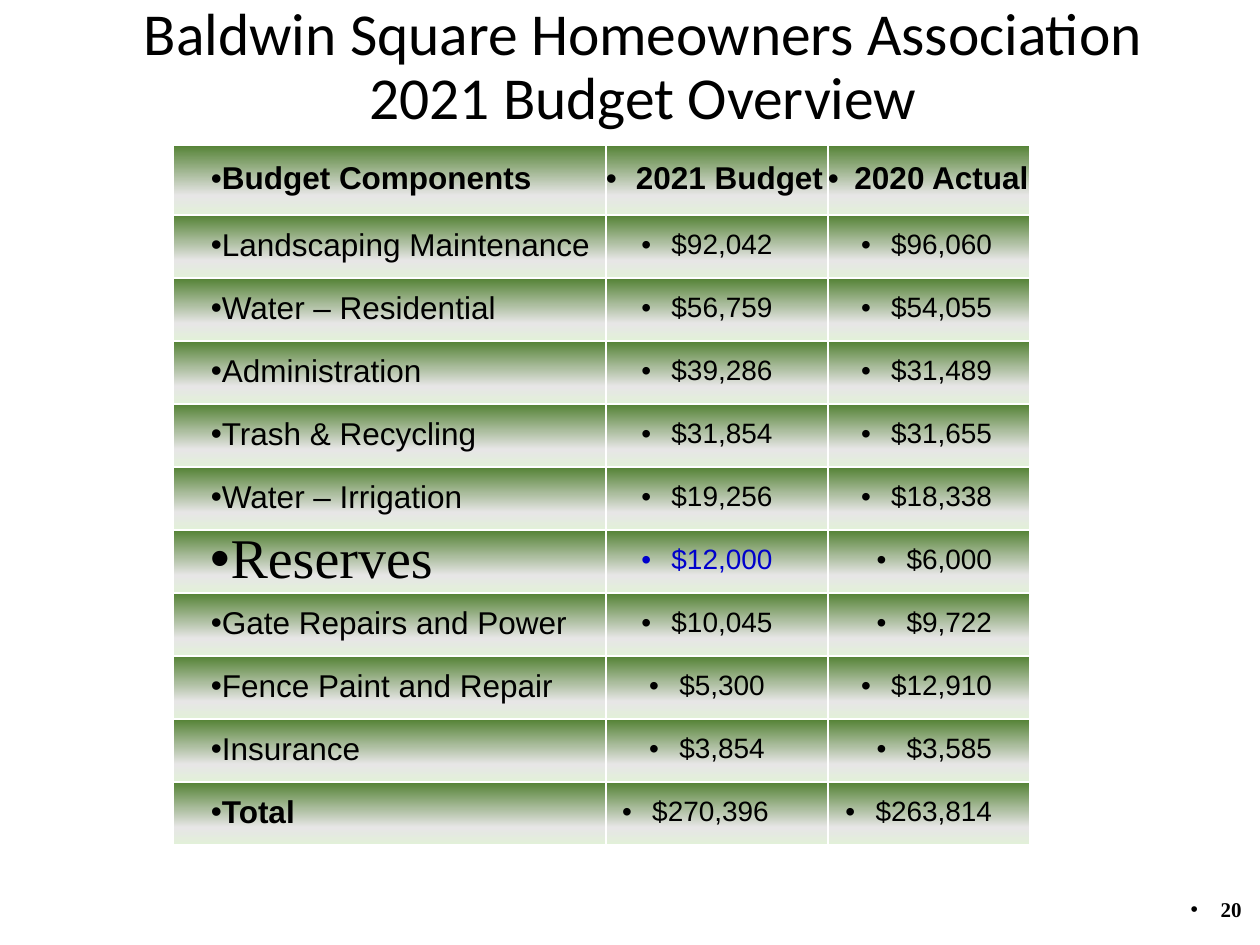
import pptx
import pptx.util
import pptx.dml.color
import pptx.enum.text
import pptx.oxml
import pptx.oxml.ns

# Content
TITLE = ["Baldwin Square Homeowners Association", "2021 Budget Overview"]
PAGE_NUMBER = "20"
HEADER = ("Budget Components", "2021 Budget", "2020 Actual")
BUDGET = [
    ("Landscaping Maintenance", "$92,042", "$96,060"),
    ("Water – Residential", "$56,759", "$54,055"),
    ("Administration", "$39,286", "$31,489"),
    ("Trash & Recycling", "$31,854", "$31,655"),
    ("Water – Irrigation", "$19,256", "$18,338"),
    ("Reserves", "$12,000", "$6,000"),
    ("Gate Repairs and Power", "$10,045", "$9,722"),
    ("Fence Paint and Repair", "$5,300", "$12,910"),
    ("Insurance", "$3,854", "$3,585"),
    ("Total", "$270,396", "$263,814"),
]

THEME = {
    "text": "000000", "accent": "0000CC", "border": "FFFFFF",
    "gradient": [(0, "548235"), (72, "E7E6E6"), (100, "E2F0D9")],
    "title": 34, "label": 18, "money": 16, "reserves": 32, "page": 12,
    "sans": "Arial", "heading": "Calibri", "serif": "Times New Roman",
}

# Layout in px, 126 to the inch
SLIDE = (1260, 945)
TITLE_BOX = (32, 18, 1222, 101)
PAGE_BOX = (1171, 878, 83, 62)
TABLE_ORIGIN = (173, 145)
COLUMNS = (433, 222, 202)
HEADER_HEIGHT, ROW_HEIGHT = 70, 63
CELL_INSET = 38
HANGING, WIDE_MARGIN, MONEY_MARGIN = 30, 25, 10

ALIGN = pptx.enum.text.PP_ALIGN
MIDDLE = pptx.enum.text.MSO_ANCHOR.MIDDLE
COLUMN_ALIGN = (ALIGN.LEFT, ALIGN.CENTER, ALIGN.RIGHT)


def px(length):
    return round(length * 914400 / 126)


def add_bullet(para, margin=0, hanging=0):
    props = para._p.get_or_add_pPr()
    props.set("marL", str(px(margin)))
    props.set("indent", str(-px(hanging)))
    ns = pptx.oxml.ns.nsdecls("a")
    for tag in (f'buFont {ns} typeface="{THEME["sans"]}"',
                f'buChar {ns} char="•"'):
        props.append(pptx.oxml.parse_xml(f"<a:{tag}/>"))


def style(para, align, size, font, color=THEME["text"], bold=False):
    para.alignment = align
    for span in para.runs:
        span.font.size = pptx.util.Pt(size)
        span.font.name = font
        span.font.bold = bold
        span.font.color.rgb = pptx.dml.color.RGBColor.from_string(color)


def add_text(page, area, text):
    frame = page.shapes.add_textbox(*map(px, area)).text_frame
    frame.word_wrap = True
    frame.vertical_anchor = MIDDLE
    frame.text = text
    return frame.paragraphs


def paint_cell(cell):
    """Give the cell white borders and the vertical green gradient."""
    ns = pptx.oxml.ns.nsdecls("a")
    props = cell._tc.get_or_add_tcPr()
    for side in "LRTB":
        props.append(pptx.oxml.parse_xml(
            f'<a:ln{side} {ns} w="12700"><a:solidFill>'
            f'<a:srgbClr val="{THEME["border"]}"/></a:solidFill></a:ln{side}>'))
    stops = "".join(
        f'<a:gs pos="{position * 1000}"><a:srgbClr val="{color}"/></a:gs>'
        for position, color in THEME["gradient"])
    props.append(pptx.oxml.parse_xml(
        f'<a:gradFill {ns} rotWithShape="1"><a:gsLst>{stops}</a:gsLst>'
        '<a:lin ang="5400000" scaled="0"/></a:gradFill>'))


def cell_look(row_name, column, is_header):
    """Return the size, font, colour and weight of a cell's text."""
    size = THEME["label"] if is_header or column == 0 else THEME["money"]
    font, color = THEME["sans"], THEME["text"]
    if row_name == "Reserves" and column == 0:
        size, font = THEME["reserves"], THEME["serif"]
    if row_name == "Reserves" and column == 1:
        color = THEME["accent"]
    bold = is_header or (row_name == "Total" and column == 0)
    return size, font, color, bold


def fill_cell(cell, text, row_name, column, is_header):
    is_total = row_name == "Total" and column == 1
    inset_right = is_total or (column == 2 and not is_header)
    cell.margin_left = px(CELL_INSET if column == 0 else 0)
    cell.margin_right = px(CELL_INSET if inset_right else 0)
    cell.margin_top = cell.margin_bottom = 0
    cell.vertical_anchor = MIDDLE
    paint_cell(cell)

    cell.text_frame.text = text
    para = cell.text_frame.paragraphs[0]
    para.line_spacing = 0.9
    if column == 0:
        add_bullet(para)
    else:
        wide = is_total or is_header
        add_bullet(para, WIDE_MARGIN if wide else MONEY_MARGIN, HANGING)
    align = ALIGN.CENTER if is_header and column else COLUMN_ALIGN[column]
    style(para, align, *cell_look(row_name, column, is_header))


def add_budget(page):
    rows = [HEADER] + BUDGET
    heights = [HEADER_HEIGHT] + [ROW_HEIGHT] * len(BUDGET)
    area = (*TABLE_ORIGIN, sum(COLUMNS), sum(heights))
    table = page.shapes.add_table(
        len(rows), len(COLUMNS), *map(px, area)).table
    for column, width in zip(table.columns, COLUMNS):
        column.width = px(width)
    for row, height in zip(table.rows, heights):
        row.height = px(height)
    for r, values in enumerate(rows):
        for c, text in enumerate(values):
            fill_cell(table.cell(r, c), text, values[0], c, r == 0)


def main():
    deck = pptx.Presentation()
    deck.slide_width, deck.slide_height = map(px, SLIDE)
    page = deck.slides.add_slide(deck.slide_layouts[6])

    # Page number
    number = add_text(page, PAGE_BOX, PAGE_NUMBER)[0]
    add_bullet(number, HANGING, HANGING)
    style(number, ALIGN.RIGHT, THEME["page"], THEME["serif"], bold=True)

    # Budget table
    add_budget(page)

    # Title
    for para in add_text(page, TITLE_BOX, "\n".join(TITLE)):
        para.line_spacing = 0.9
        style(para, ALIGN.CENTER, THEME["title"], THEME["heading"])

    deck.save("out.pptx")


if __name__ == "__main__":
    main()
